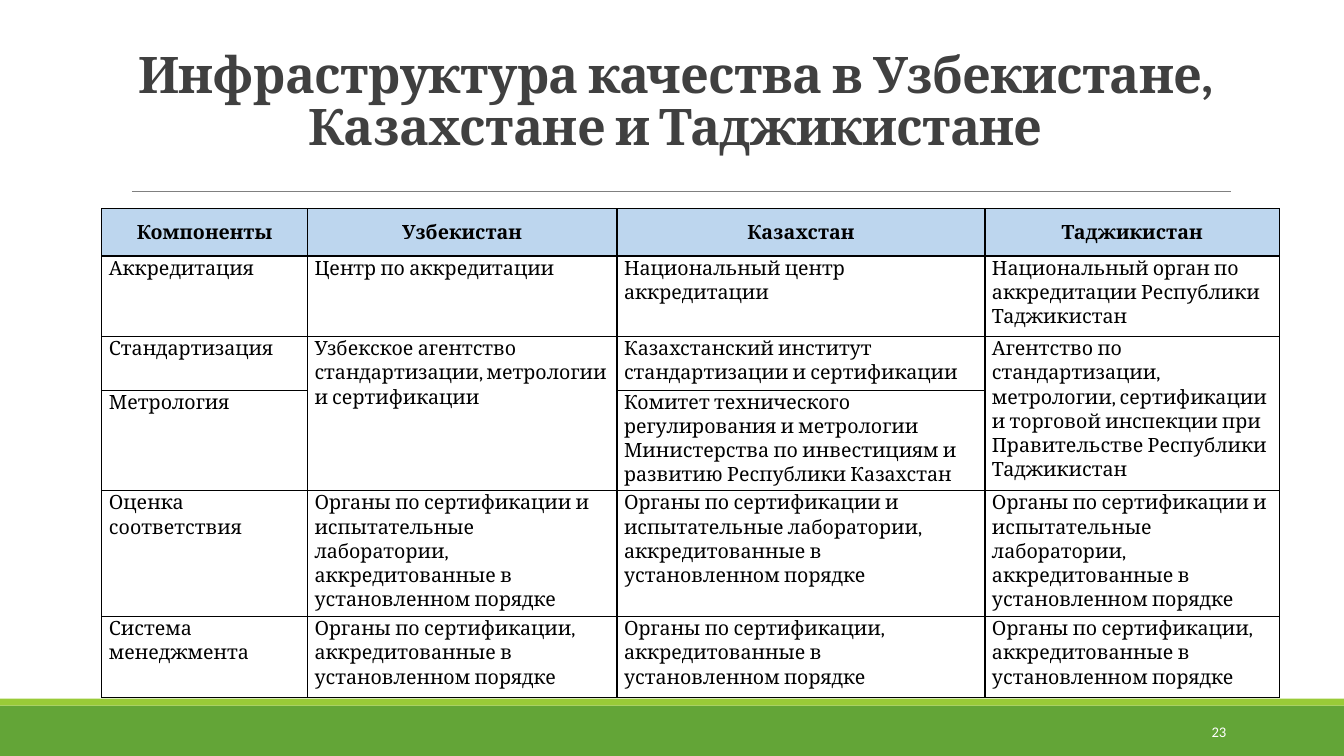
from dataclasses import dataclass

from lxml import etree
from pptx import Presentation
from pptx.dml.color import RGBColor
from pptx.enum.shapes import MSO_CONNECTOR, MSO_SHAPE
from pptx.enum.text import MSO_ANCHOR, PP_ALIGN
from pptx.oxml.ns import qn
from pptx.util import Inches, Pt

LEFT, CENTER, RIGHT = PP_ALIGN.LEFT, PP_ALIGN.CENTER, PP_ALIGN.RIGHT
TOP, MIDDLE, BOTTOM = MSO_ANCHOR.TOP, MSO_ANCHOR.MIDDLE, MSO_ANCHOR.BOTTOM
RECTANGLE, STRAIGHT = MSO_SHAPE.RECTANGLE, MSO_CONNECTOR.STRAIGHT


@dataclass(frozen=True)
class Theme:
    serif: str = "Cambria"
    sans: str = "Calibri"
    title_size: float = 36
    table_size: float = 14
    number_size: float = 10.5
    title: str = "404040"
    text: str = "000000"
    border: str = "000000"
    header: str = "BDD6EE"
    rule: str = "808080"
    band: str = "63A537"
    strip: str = "99CB38"
    number: str = "FFFFFF"


class SlideBuilder:
    """Draws on one slide; every place and length is a percentage of its size."""

    def __init__(self, presentation, theme):
        self.theme = theme
        self.width = presentation.slide_width
        self.height = presentation.slide_height
        self.slide = presentation.slides.add_slide(presentation.slide_layouts[6])

    def across(self, percent):
        return round(self.width * percent / 100)

    def down(self, percent):
        return round(self.height * percent / 100)

    def box(self, left, top, width, height):
        return self.across(left), self.down(top), self.across(width), self.down(height)

    def bar(self, place, color):
        bar = self.slide.shapes.add_shape(RECTANGLE, *self.box(*place))
        bar.shadow.inherit = False
        bar.fill.solid()
        bar.fill.fore_color.rgb = RGBColor.from_string(color)
        bar.line.fill.background()

    def rule(self, left, right, top, color, weight):
        rule = self.slide.shapes.add_connector(
            STRAIGHT, self.across(left), self.down(top), self.across(right), self.down(top))
        rule.line.color.rgb = RGBColor.from_string(color)
        rule.line.width = Pt(weight)
        etree.SubElement(rule._element.spPr, qn("a:effectLst"))

    def style(self, paragraph, font, size, color, bold=False, align=LEFT, spacing=1.0):
        paragraph.alignment = align
        paragraph.line_spacing = spacing
        paragraph.font.name = font
        paragraph.font.size = Pt(size)
        paragraph.font.bold = bold
        paragraph.font.color.rgb = RGBColor.from_string(color)

    def text(self, place, wording, anchor, tracking=0, **style):
        """Add a text box; tracking is the letter spacing in points."""
        frame = self.slide.shapes.add_textbox(*self.box(*place)).text_frame
        frame.word_wrap = True
        frame.vertical_anchor = anchor
        paragraph = frame.paragraphs[0]
        run = paragraph.add_run()
        run.text = wording
        self.style(paragraph, **style)
        if tracking:
            run.font._element.set("spc", str(round(tracking * 100)))

    def table(self, left, top, columns, rows, content):
        """Add a table with a header row; None joins a cell to the one above."""
        place = self.box(left, top, sum(columns), sum(rows))
        table = self.slide.shapes.add_table(len(rows), len(columns), *place).table
        table.horz_banding = False
        for column, share in zip(table.columns, columns):
            column.width = self.across(share)
        for row, share in zip(table.rows, rows):
            row.height = self.down(share)
        for r, wordings in enumerate(content):
            for c, wording in enumerate(wordings):
                cell = table.cell(r, c)
                self.cell(cell, wording, is_header=r == 0)
                if wording is None:
                    table.cell(r - 1, c).merge(cell)

    def cell(self, cell, wording, is_header):
        cell.margin_left = cell.margin_right = Inches(0.07)
        cell.margin_top = cell.margin_bottom = 0
        cell.vertical_anchor = MIDDLE if is_header else TOP
        if is_header:
            cell.fill.solid()
            cell.fill.fore_color.rgb = RGBColor.from_string(self.theme.header)
        else:
            cell.fill.background()
        self.borders(cell)
        cell.text = wording or ""
        self.style(cell.text_frame.paragraphs[0], self.theme.serif, self.theme.table_size,
                   self.theme.text, bold=is_header,
                   align=CENTER if is_header else LEFT, spacing=1.07)

    def borders(self, cell):
        properties = cell._tc.get_or_add_tcPr()
        for position, side in enumerate(("lnL", "lnR", "lnT", "lnB")):
            line = etree.Element(qn(f"a:{side}"), w=str(Pt(1)))
            fill = etree.SubElement(line, qn("a:solidFill"))
            etree.SubElement(fill, qn("a:srgbClr"), val=self.theme.border)
            properties.insert(position, line)


CERTIFIERS_AND_LABS = ("Органы по сертификации и испытательные лаборатории, "
                       "аккредитованные в установленном порядке")
CERTIFIERS = "Органы по сертификации, аккредитованные в установленном порядке"
INFRASTRUCTURE = [
    ["Компоненты", "Узбекистан", "Казахстан", "Таджикистан"],
    ["Аккредитация", "Центр по аккредитации", "Национальный центр аккредитации",
     "Национальный орган по аккредитации Республики Таджикистан"],
    ["Стандартизация", "Узбекское агентство стандартизации, метрологии и сертификации",
     "Казахстанский институт стандартизации и сертификации",
     "Агентство по стандартизации, метрологии, сертификации и торговой инспекции "
     "при Правительстве Республики Таджикистан"],
    ["Метрология", None,
     "Комитет технического регулирования и метрологии Министерства по инвестициям "
     "и развитию Республики Казахстан", None],
    ["Оценка соответствия"] + [CERTIFIERS_AND_LABS] * 3,
    ["Система менеджмента"] + [CERTIFIERS] * 3,
]


def main():
    presentation = Presentation()
    presentation.slide_width = Inches(13.33)
    presentation.slide_height = Inches(7.5)
    theme = Theme()
    page = SlideBuilder(presentation, theme)

    page.bar((0, 93.33, 100, 6.67), theme.band)
    page.bar((0, 92.4, 100, 0.93), theme.strip)
    page.rule(9.82, 91.58, 25.33, theme.rule, 0.5)
    page.text((9, 0, 82.5, 21.2),
              "Инфраструктура качества в Узбекистане, Казахстане и Таджикистане",
              BOTTOM, tracking=-0.5, font=theme.serif, size=theme.title_size,
              color=theme.title, bold=True, align=CENTER, spacing=0.85)
    page.table(7.58, 27.6, columns=(15.3, 23.03, 27.38, 21.91),
               rows=(6.27, 10.67, 7.07, 10.67, 14.27, 10.67), content=INFRASTRUCTURE)
    page.text((81.25, 94.13, 10.73, 5.33), "23", MIDDLE, font=theme.sans,
              size=theme.number_size, color=theme.number, align=RIGHT)
    presentation.save("out.pptx")


if __name__ == "__main__":
    main()
